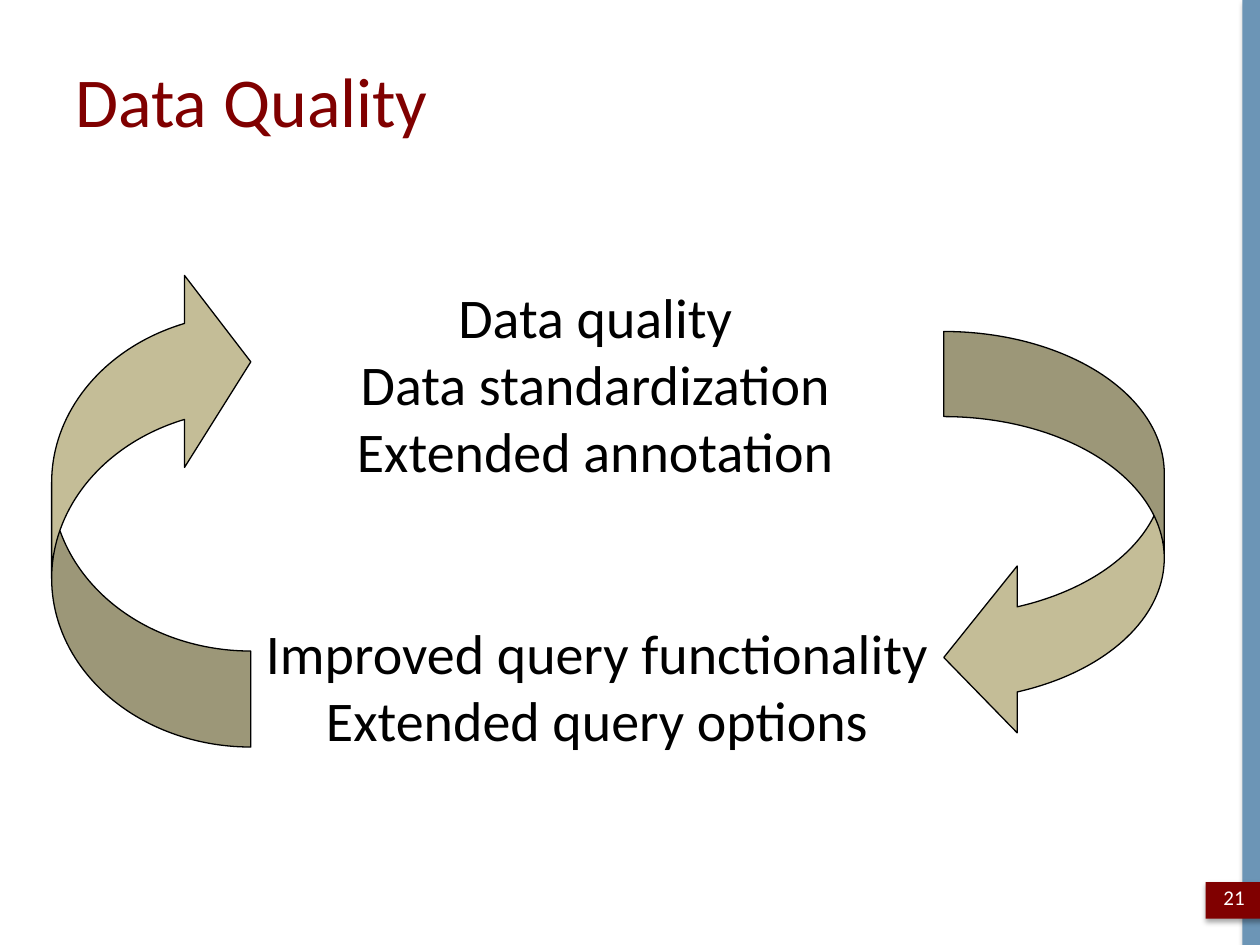
from typing import NamedTuple

from lxml.etree import SubElement
from pptx import Presentation
from pptx.dml.color import RGBColor
from pptx.enum.shapes import MSO_SHAPE as Kind
from pptx.enum.text import MSO_ANCHOR as Anchor, MSO_AUTO_SIZE as Fit, PP_ALIGN as Align
from pptx.oxml.ns import qn
from pptx.util import Pt

BLUE = RGBColor(0x6C, 0x95, 0xB6)
RED = RGBColor(0x80, 0x00, 0x00)
TAN = RGBColor(0xC4, 0xBD, 0x97)
BLACK = RGBColor(0x00, 0x00, 0x00)
WHITE = RGBColor(0xFF, 0xFF, 0xFF)
FONT = "Calibri"


class Box(NamedTuple):
    left: float
    top: float
    width: float
    height: float


class Arrow(NamedTuple):
    kind: Kind
    box: Box
    adjust: tuple[float, ...]
    flip: bool


class Label(NamedTuple):
    box: Box
    lines: tuple[str, ...]
    size: float
    color: RGBColor
    wrap: bool
    fit: Fit
    anchor: Anchor


PANELS = [
    (Box(710, 0, 10, 540), BLUE),
    (Box(689, 504, 34.5, 21), RED),
]
ARROWS = [
    Arrow(Kind.CURVED_LEFT_ARROW, Box(539.3, 189.4, 126, 234), (0.386, 0.757, 0.333), False),
    Arrow(Kind.CURVED_RIGHT_ARROW, Box(29.5, 151.9, 113.8, 275), (0.482, 0.964, 0.333), True),
]
LABELS = [
    Label(Box(195.1, 157.7, 290.2, 123.8),
          ("Data quality", "Data standardization", "Extended annotation"),
          32, BLACK, False, Fit.SHAPE_TO_FIT_TEXT, Anchor.TOP),
    Label(Box(143.3, 349.9, 396, 85),
          ("Improved query functionality", "Extended query options"),
          32, BLACK, True, Fit.SHAPE_TO_FIT_TEXT, Anchor.TOP),
    Label(Box(689, 498.2, 32.4, 28.8), ("21",), 12, WHITE, True, Fit.NONE, Anchor.MIDDLE),
]


def place(box: Box) -> list[Pt]:
    return [Pt(value) for value in box]


def write(frame, lines: tuple[str, ...], size: float, color: RGBColor, align: Align) -> None:
    frame.text = "\n".join(lines)
    for para in frame.paragraphs:
        para.alignment = align
        para.font.name = FONT
        para.font.size = Pt(size)
        para.font.color.rgb = color


def draw_panel(slide, box: Box, color: RGBColor) -> None:
    shape = slide.shapes.add_shape(Kind.RECTANGLE, *place(box))
    shape.fill.solid()
    shape.fill.fore_color.rgb = color
    shape.line.fill.background()
    # Soft shadow straight down
    shape.shadow.inherit = False
    effects = shape.element.spPr.find(qn("a:effectLst"))
    shade = SubElement(effects, qn("a:outerShdw"), blurRad=str(Pt(3.1)),
                       dist=str(Pt(1.8)), dir="5400000", rotWithShape="0")
    tone = SubElement(shade, qn("a:srgbClr"), val=str(BLACK))
    SubElement(tone, qn("a:alpha"), val="35000")


def draw_arrow(slide, arrow: Arrow) -> None:
    shape = slide.shapes.add_shape(arrow.kind, *place(arrow.box))
    for index, value in enumerate(arrow.adjust):
        shape.adjustments[index] = value
    shape.shadow.inherit = False
    shape.fill.solid()
    shape.fill.fore_color.rgb = TAN
    shape.line.color.rgb = BLACK
    shape.line.width = Pt(0.75)
    if arrow.flip:
        shape.element.spPr.find(qn("a:xfrm")).set("flipV", "1")


def draw_label(slide, label: Label) -> None:
    frame = slide.shapes.add_textbox(*place(label.box)).text_frame
    frame.word_wrap = label.wrap
    frame.auto_size = label.fit
    frame.vertical_anchor = label.anchor
    write(frame, label.lines, label.size, label.color, Align.CENTER)


def main() -> None:
    deck = Presentation()
    deck.slide_width, deck.slide_height = Pt(720), Pt(540)
    slide = deck.slides.add_slide(deck.slide_layouts[5])

    # Side bar and number badge
    for box, color in PANELS:
        draw_panel(slide, box, color)

    # Cycle of arrows
    for arrow in ARROWS:
        draw_arrow(slide, arrow)

    # Title
    title = slide.shapes.title
    title.left, title.top, title.width, title.height = place(Box(36, 21.6, 648, 70.6))
    title.text_frame.vertical_anchor = Anchor.MIDDLE
    write(title.text_frame, ("Data Quality",), 40, RED, Align.LEFT)

    # Cycle texts and slide number
    for label in LABELS:
        draw_label(slide, label)

    deck.save("out.pptx")


if __name__ == "__main__":
    main()
